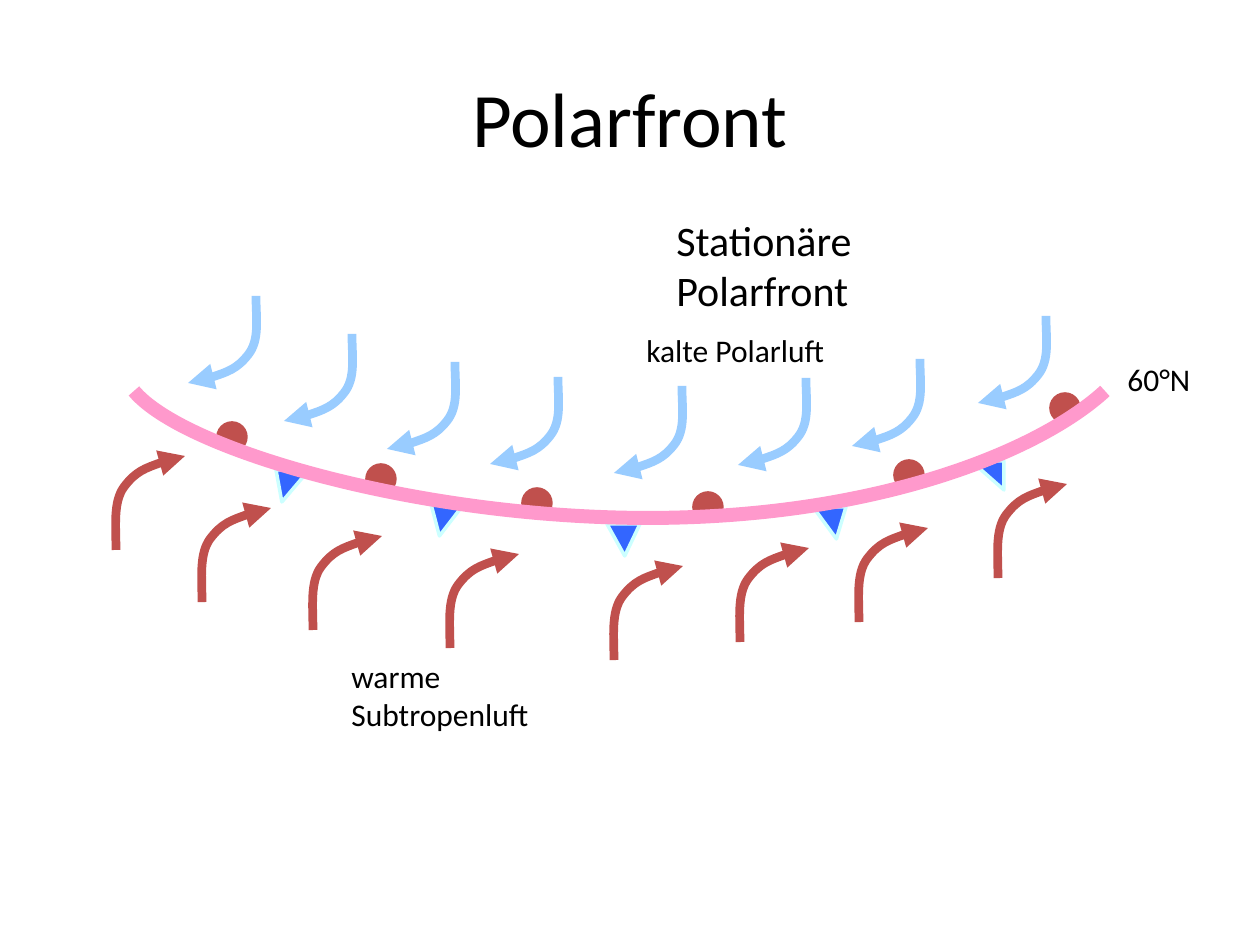
from dataclasses import dataclass

from lxml import etree
from pptx import Presentation
from pptx import util as u
from pptx.dml.color import RGBColor
from pptx.enum import shapes, text
from pptx.oxml.ns import qn

PX = u.Inches(1) / 126


@dataclass(frozen=True)
class Theme:
    font: str = "Calibri"
    ink: RGBColor = RGBColor(0x00, 0x00, 0x00)
    warm: RGBColor = RGBColor(0xC0, 0x50, 0x4D)
    cold: RGBColor = RGBColor(0x99, 0xCC, 0xFF)
    front: RGBColor = RGBColor(0xFF, 0x99, 0xCC)
    spike: RGBColor = RGBColor(0x33, 0x66, 0xFF)
    spike_edge: RGBColor = RGBColor(0xCC, 0xFF, 0xFF)
    title_size: int = 44
    heading_size: int = 24
    label_size: int = 18
    front_width: int = 8
    arrow_width: int = 5
    edge_width: int = 2


THEME = Theme()

# Curves: a start point, then three points for each Bézier segment
FRONT_CURVE = [(0, 0), (49, 59), (284, 127), (514, 127),
               (743, 127), (906, 60), (971, 0)]
COLD_CURVE = [(68, 0), (68, 23), (72, 44), (60, 59), (49, 73), (25, 83), (0, 87)]
WARM_CURVE = [(3, 94), (3, 70), (0, 46), (11, 31), (23, 15), (47, 5), (72, 0)]

# Places relative to the left end of the front
COLD_AIR = [(844, -75), (718, -32), (604, -13), (480, -5),
            (356, -14), (253, -29), (150, -57), (54, -95)]
WARM_AIR = [(-21, 65), (65, 117), (176, 145), (313, 163),
            (477, 175), (603, 157), (722, 137), (861, 93)]
COLD_SPIKES = [(142, 79, 32, 0.178), (297, 113, 32, 0.257), (473, 133, 32, 0.539),
               (679, 116, 32, 0.711), (837, 70, 29, 1)]
WARM_BUMPS = [(233, 74), (389, 98), (560, 102), (761, 70), (917, 3), (84, 32)]


def emu(*lengths):
    return [round(length * PX) for length in lengths]


def style_line(shape, color, width):
    shape.line.color.rgb = color
    shape.line.width = u.Pt(width)
    shape.shadow.inherit = False


def add_curve(slide, left, top, points, color, width, arrow=False):
    placed = [(left + x, top + y) for x, y in points]
    builder = slide.shapes.build_freeform(*placed[0], scale=PX)
    builder.add_line_segments(placed[1:], close=False)
    curve = builder.convert_to_shape()
    curve.fill.background()
    style_line(curve, color, width)

    # Each run of three line points becomes one cubic segment
    path = curve._element.find(".//" + qn("a:path"))
    lines = path.findall(qn("a:lnTo"))
    for first in range(0, len(lines), 3):
        segment = etree.SubElement(path, qn("a:cubicBezTo"))
        for line in lines[first:first + 3]:
            segment.append(line[0])
            path.remove(line)
    if arrow:
        etree.SubElement(curve.line._get_or_add_ln(), qn("a:tailEnd"), type="triangle")


def add_marker(slide, kind, box, fill, edge):
    marker = slide.shapes.add_shape(kind, *emu(*box))
    marker.fill.solid()
    marker.fill.fore_color.rgb = fill
    style_line(marker, edge, THEME.edge_width)
    return marker


def style_text(paragraph, size):
    paragraph.font.name = THEME.font
    paragraph.font.size = u.Pt(size)
    paragraph.font.color.rgb = THEME.ink


def add_title(slide, box, wording):
    title = slide.shapes.title
    title.left, title.top, title.width, title.height = emu(*box)
    title.text_frame.text = wording
    title.text_frame.vertical_anchor = text.MSO_ANCHOR.MIDDLE
    paragraph = title.text_frame.paragraphs[0]
    paragraph.alignment = text.PP_ALIGN.CENTER
    style_text(paragraph, THEME.title_size)


def add_label(slide, box, wording, size, right_inset=0):
    frame = slide.shapes.add_textbox(*emu(*box)).text_frame
    frame.text = wording
    frame.word_wrap = True
    frame.vertical_anchor = text.MSO_ANCHOR.MIDDLE
    frame.margin_right = emu(right_inset)[0]
    style_text(frame.paragraphs[0], size)


def add_polar_front(slide, left, top):
    # Cold and warm front symbols, half covered by the front line
    for x, y, height, tip in COLD_SPIKES:
        spike = add_marker(slide, shapes.MSO_SHAPE.ISOSCELES_TRIANGLE,
                           (left + x, top + y, 33, height),
                           THEME.spike, THEME.spike_edge)
        spike.adjustments[0] = tip
        spike._element.spPr.xfrm.set("flipV", "1")
    for x, y in WARM_BUMPS:
        add_marker(slide, shapes.MSO_SHAPE.OVAL, (left + x, top + y, 28, 28),
                   THEME.warm, THEME.warm)

    add_curve(slide, left, top, FRONT_CURVE, THEME.front, THEME.front_width)

    # Air flowing towards the front from both sides
    for places, curve, color in ((COLD_AIR, COLD_CURVE, THEME.cold),
                                 (WARM_AIR, WARM_CURVE, THEME.warm)):
        for x, y in places:
            add_curve(slide, left + x, top + y, curve, color,
                      THEME.arrow_width, arrow=True)


def add_labels(slide, left, top):
    add_label(slide, (left + 500, top - 66, 204, 50), "kalte Polarluft", THEME.label_size)
    add_label(slide, (left + 205, top + 279, 292, 50), "warme Subtropenluft",
              THEME.label_size, right_inset=80)
    add_label(slide, (left + 981, top - 37, 92, 50), "60°N", THEME.label_size)
    add_label(slide, (left + 530, top - 158, 375, 63), "Stationäre Polarfront",
              THEME.heading_size, right_inset=150)


def main():
    deck = Presentation()
    deck.slide_width, deck.slide_height = emu(1260, 945)
    slide = deck.slides.add_slide(deck.slide_layouts.get_by_name("Title Only"))
    add_title(slide, (63, 38, 1134, 158), "Polarfront")
    add_polar_front(slide, 134, 391)
    add_labels(slide, 134, 391)
    deck.save("out.pptx")


if __name__ == "__main__":
    main()
